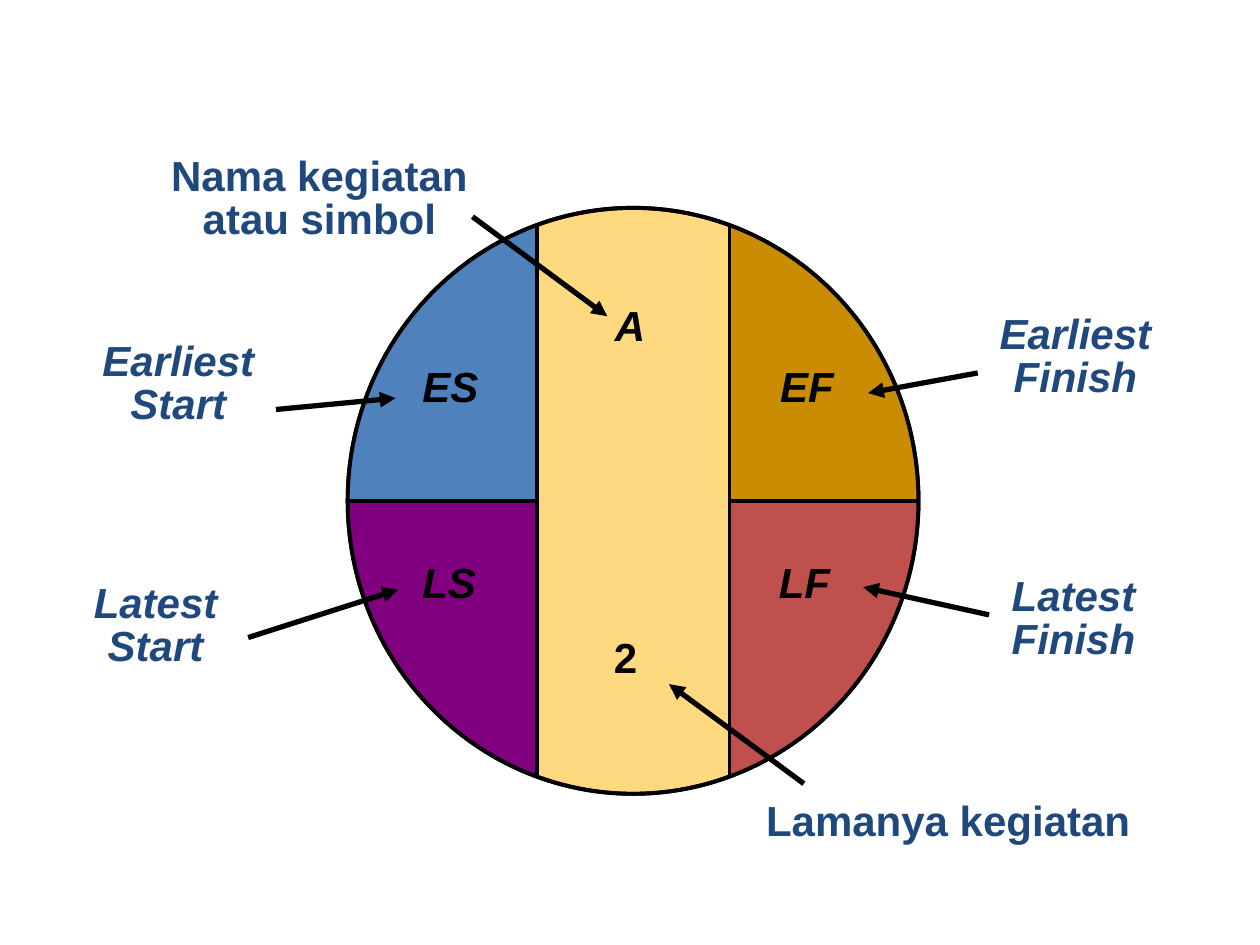
import math
from dataclasses import dataclass

from lxml import etree
from pptx import Presentation, util as u
from pptx.dml.color import RGBColor
from pptx.enum import shapes, text
from pptx.oxml.ns import qn

PX = u.Inches(1) // 100


@dataclass(frozen=True)
class Theme:
    font: str = "Arial"
    size: int = 24
    spacing: float = 0.85
    ink: str = "000000"
    label: str = "1F497D"
    centre: str = "FFD980"
    early_start: str = "4F81BD"
    early_finish: str = "CA8C02"
    late_start: str = "800080"
    late_finish: str = "C0504D"
    thin: float = 0.75
    outline: float = 2.25
    arrow: float = 3


THEME = Theme()


def px(*lengths):
    return [u.Emu(round(length * PX)) for length in lengths]


def style_shape(shape, fill, width):
    shape.shadow.inherit = False
    if fill:
        shape.fill.solid()
        shape.fill.fore_color.rgb = RGBColor.from_string(fill)
    else:
        shape.fill.background()
    shape.line.color.rgb = RGBColor.from_string(THEME.ink)
    shape.line.width = u.Pt(width)


def add_line(slide, start, end, width, arrow=False):
    line = slide.shapes.add_connector(
        shapes.MSO_CONNECTOR.STRAIGHT, *px(*start, *end))
    line.line.color.rgb = RGBColor.from_string(THEME.ink)
    line.line.width = u.Pt(width)
    if arrow:
        etree.SubElement(line.line._get_or_add_ln(), qn("a:tailEnd"), type="triangle")
    etree.SubElement(line._element.spPr, qn("a:effectLst"))


def add_text(slide, box, words, color, italic=True, wrap=False, spacing=THEME.spacing):
    shape = slide.shapes.add_textbox(*px(*box))
    frame = shape.text_frame
    frame.text = words
    frame.word_wrap = wrap
    frame.auto_size = text.MSO_AUTO_SIZE.NONE
    frame.margin_top, frame.margin_bottom = px(8, 0)
    paragraph = frame.paragraphs[0]
    paragraph.alignment = text.PP_ALIGN.CENTER
    paragraph.line_spacing = spacing
    font = paragraph.runs[0].font
    font.name, font.size = THEME.font, u.Pt(THEME.size)
    font.bold, font.italic = True, italic
    font.color.rgb = RGBColor.from_string(color)


def add_ellipse(slide, box, fill):
    shape = slide.shapes.add_shape(shapes.MSO_SHAPE.OVAL, *px(*box))
    style_shape(shape, fill, THEME.outline)


def add_sector(slide, box, cut, side, half, fill):
    """Fill the part of the ellipse outside the cut; side and half are -1 or 1."""
    left, top, width, height = box
    middle_x, middle_y = left + width / 2, top + height / 2
    sweep = math.acos(abs(cut - middle_x) / (width / 2))
    steps = 24
    arc = [(middle_x + side * width / 2 * math.cos(sweep * step / steps),
            middle_y + half * height / 2 * math.sin(sweep * step / steps))
           for step in range(steps + 1)]
    builder = slide.shapes.build_freeform(cut, middle_y, scale=PX)
    builder.add_line_segments(arc, close=True)
    style_shape(builder.convert_to_shape(), fill, THEME.thin)


def draw_node(slide, box):
    """Draw the activity circle with its four time fields and centre band."""
    left, top, width, height = box
    band = 150
    cuts = {-1: left + band, 1: left + width - band}
    middle = top + height / 2
    rise = height / 2 * math.sqrt(1 - (1 - 2 * band / width) ** 2)

    add_ellipse(slide, box, THEME.centre)
    for side, half, fill in [(-1, -1, THEME.early_start), (1, -1, THEME.early_finish),
                             (1, 1, THEME.late_finish), (-1, 1, THEME.late_start)]:
        add_sector(slide, box, cuts[side], side, half, fill)
    add_ellipse(slide, box, None)
    for side, edge in [(-1, left), (1, left + width)]:
        cut = cuts[side]
        add_line(slide, (edge, middle), (cut, middle), THEME.outline)
        add_line(slide, (cut, middle - rise), (cut, middle + rise), THEME.outline)

    for words, x, y, field_width in [("A", 202, 71, 44), ("ES", 49, 119, 65),
                                     ("EF", 333, 119, 63), ("LS", 49, 275, 63),
                                     ("LF", 332, 275, 61)]:
        add_text(slide, (left + x, top + y, field_width, 38), words, THEME.ink)
    add_text(slide, (left + 201, top + 328, 39, 43), "2", THEME.ink,
             italic=False, spacing=1)


def draw_callout(slide, box, words, offset, run, italic=True, wrap=True):
    """Draw a label and an arrow that starts at offset from its box and spans run."""
    add_text(slide, box, words, THEME.label, italic, wrap)
    start = box[0] + offset[0], box[1] + offset[1]
    end = start[0] + run[0], start[1] + run[1]
    add_line(slide, start, end, THEME.arrow, arrow=True)


def main():
    presentation = Presentation()
    presentation.slide_width, presentation.slide_height = px(1000, 750)
    slide = presentation.slides.add_slide(presentation.slide_layouts[6])

    draw_node(slide, (276, 165, 453, 465))
    draw_callout(slide, (95, 117, 317, 67), "Nama kegiatan atau simbol",
                 (280, 55), (107, 79), italic=False)
    for box, words, offset, run in [
        ((44, 264, 195, 67), "Earliest Start", (175, 61), (95, -9)),
        ((748, 242, 211, 67), "Earliest Finish", (28, 54), (-87, 16)),
        ((33, 456, 181, 67), "Latest Start", (164, 50), (119, -38)),
        ((760, 450, 184, 67), "Latest Finish", (25, 38), (-100, -22)),
    ]:
        draw_callout(slide, box, words, offset, run)
    draw_callout(slide, (598, 629, 309, 38), "Lamanya kegiatan",
                 (40, -7), (-107, -79), italic=False, wrap=False)
    presentation.save("out.pptx")


if __name__ == "__main__":
    main()
